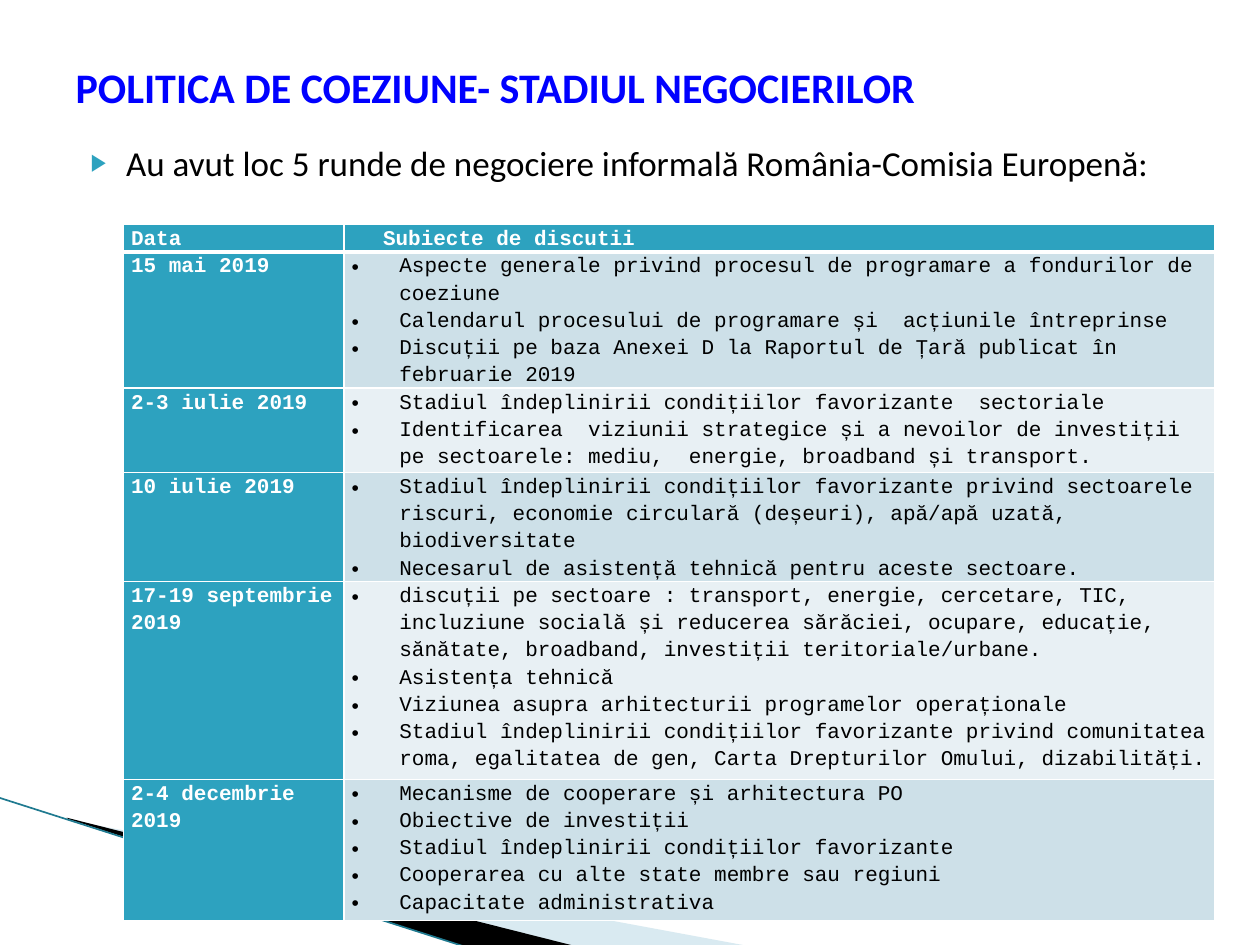
from lxml import etree
from pptx import Presentation
from pptx.dml.color import RGBColor
from pptx.enum.text import MSO_ANCHOR, PP_ALIGN
from pptx.oxml.ns import qn
from pptx.util import Inches, Pt

LEFT, MIDDLE = PP_ALIGN.LEFT, MSO_ANCHOR.MIDDLE
TEAL, WHITE, BLACK = "2DA2BF", "FFFFFF", "000000"
BANDS = ("CDE0E8", "E8F0F4")

TITLE = "POLITICA DE COEZIUNE- STADIUL NEGOCIERILOR"
INTRO = "Au avut loc 5 runde de negociere informală România-Comisia Europenă:"
HEADS = ("Data", "Subiecte de discutii")
ROUNDS = [
    ("15 mai 2019", [
        "Aspecte generale privind procesul de programare a fondurilor de coeziune",
        "Calendarul procesului de programare și  acțiunile întreprinse",
        "Discuții pe baza Anexei D la Raportul de Țară publicat în februarie 2019"]),
    ("2-3 iulie 2019", [
        "Stadiul îndeplinirii condițiilor favorizante  sectoriale",
        "Identificarea  viziunii strategice și a nevoilor de investiții pe "
        "sectoarele: mediu,  energie, broadband și transport."]),
    ("10 iulie 2019", [
        "Stadiul îndeplinirii condițiilor favorizante privind sectoarele riscuri, "
        "economie circulară (deșeuri), apă/apă uzată, biodiversitate",
        "Necesarul de asistență tehnică pentru aceste sectoare."]),
    ("17-19 septembrie 2019", [
        "discuții pe sectoare : transport, energie, cercetare, TIC, incluziune "
        "socială și reducerea sărăciei, ocupare, educație, sănătate, broadband, "
        "investiții teritoriale/urbane.",
        "Asistența tehnică",
        "Viziunea asupra arhitecturii programelor operaționale",
        "Stadiul îndeplinirii condițiilor favorizante privind comunitatea roma, "
        "egalitatea de gen, Carta Drepturilor Omului, dizabilități."]),
    ("2-4 decembrie 2019", [
        "Mecanisme de cooperare și arhitectura PO",
        "Obiective de investiții",
        "Stadiul îndeplinirii condițiilor favorizante",
        "Cooperarea cu alte state membre sau regiuni",
        "Capacitate administrativa"]),
]
COLS = (1.75, 6.91)
ROWS = (0.22, 0.67, 0.67, 0.67, 1.57, 1.12)
WEDGES = [
    ([(0.55, 6.51), (5.95, 7.51), (4.56, 7.51), (0.55, 6.5)], "A0CBDC", 40),
    ([(0.53, 6.49), (4.57, 7.51), (3.72, 7.52), (0.54, 6.5)], BLACK, 100),
]
EDGE = (-0.01, 6.33, 3.71, 7.52)

TITLE_FONT = {"name": "Calibri", "size": Pt(24), "bold": True}
INTRO_FONT = {"name": "Calibri", "size": Pt(20), "bold": False}
CELL_FONT = {"name": "Courier New", "size": Pt(12)}


def rgb(code):
    return RGBColor.from_string(code)


def add(parent, tag, **attrs):
    return etree.SubElement(parent, qn(tag), {k: str(v) for k, v in attrs.items()})


def indent(para, left, first=0.0):
    props = para._p.get_or_add_pPr()
    props.set("marL", str(Inches(left)))
    props.set("indent", str(Inches(first)))
    return props


def write(para, text, color, form):
    run = para.add_run()
    run.text = text
    for key, value in form.items():
        setattr(run.font, key, value)
    run.font.color.rgb = rgb(color)


def place(shape, *box):
    for key, value in zip(("left", "top", "width", "height"), box):
        setattr(shape, key, Inches(value))


def fill_cell(cell, lines, color, back, bold, foot=1, pad=0):
    for side in ("left", "right"):
        setattr(cell, f"margin_{side}", Inches(0.06))
    cell.margin_top = cell.margin_bottom = 0
    frame = cell.text_frame
    for i, line in enumerate(lines):
        para = frame.add_paragraph() if i else frame.paragraphs[0]
        para.line_spacing = 1.15
        if bold:
            indent(para, pad)
        else:
            props = indent(para, 0.38, -0.38)
            add(props, "a:buFont", typeface="Arial")
            add(props, "a:buChar", char="•")
        write(para, line, color, {**CELL_FONT, "bold": bold})
    props = cell._tc.get_or_add_tcPr()
    for side, width in (("L", 1), ("R", 1), ("T", 1), ("B", foot)):
        edge = add(props, f"a:ln{side}", w=Pt(width))
        add(add(edge, "a:solidFill"), "a:srgbClr", val=WHITE)
    cell.fill.solid()
    cell.fill.fore_color.rgb = rgb(back)


def add_decor(slide):
    shapes = slide.shapes
    decor = []
    for points, color, alpha in WEDGES:
        start, *rest = [(Inches(x), Inches(y)) for x, y in points]
        pen = shapes.build_freeform(*start)
        pen.add_line_segments(rest)
        wedge = pen.convert_to_shape()
        wedge.shadow.inherit = False
        wedge.line.fill.background()
        wedge.fill.solid()
        wedge.fill.fore_color.rgb = rgb(color)
        if alpha < 100:
            tone = wedge._element.spPr.find(".//" + qn("a:srgbClr"))
            add(tone, "a:alpha", val=alpha * 1000)
        decor.append(wedge)
    line = shapes.add_connector(1, *map(Inches, EDGE))
    line.line.color.rgb = rgb("1F7A90")
    line.line.width = Pt(0.95)
    add(line._element.spPr, "a:effectLst")
    decor.append(line)
    for i, shape in enumerate(decor):
        shapes._spTree.insert(2 + i, shape._element)


def add_text(slide):
    title, body = slide.placeholders
    place(title, 0.5, 0.3, 9, 0.77)
    title.text_frame.vertical_anchor = MIDDLE
    para = title.text_frame.paragraphs[0]
    para.alignment = LEFT
    write(para, TITLE, "0000FF", TITLE_FONT)

    place(body, 0.5, 1.07, 9, 5.5)
    para = body.text_frame.paragraphs[0]
    para.space_before = Pt(4)
    props = indent(para, 0.4, -0.28)
    add(add(props, "a:buClr"), "a:srgbClr", val=TEAL)
    add(props, "a:buSzPct", val=68000)
    add(props, "a:buChar", char="▶")
    write(para, INTRO, BLACK, INTRO_FONT)


def add_rounds(slide):
    box = map(Inches, (0.98, 1.78, sum(COLS), sum(ROWS)))
    table = slide.shapes.add_table(len(ROWS), len(COLS), *box).table
    for col, width in zip(table.columns, COLS):
        col.width = Inches(width)
    for row, height in zip(table.rows, ROWS):
        row.height = Inches(height)
    for i, head in enumerate(HEADS):
        fill_cell(table.cell(0, i), [head], WHITE, TEAL, True, foot=3, pad=0.25 * i)
    for i, (date, topics) in enumerate(ROUNDS):
        fill_cell(table.cell(i + 1, 0), [date], WHITE, TEAL, True)
        fill_cell(table.cell(i + 1, 1), topics, BLACK, BANDS[i % 2], False)


def main():
    deck = Presentation()
    deck.slide_width, deck.slide_height = Inches(10), Inches(7.5)
    slide = deck.slides.add_slide(deck.slide_layouts[1])
    add_decor(slide)
    add_text(slide)
    add_rounds(slide)
    deck.save("out.pptx")


if __name__ == "__main__":
    main()
